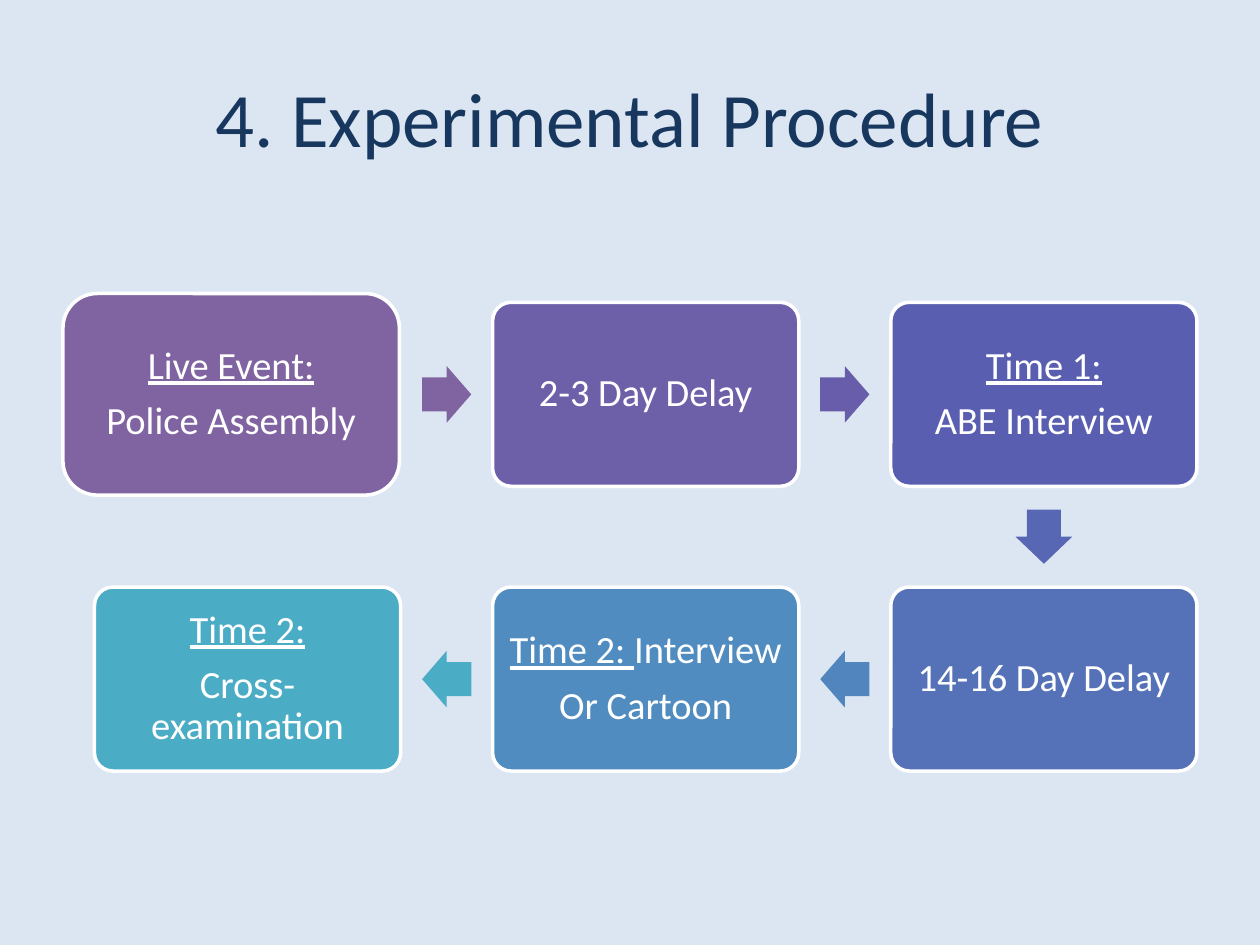
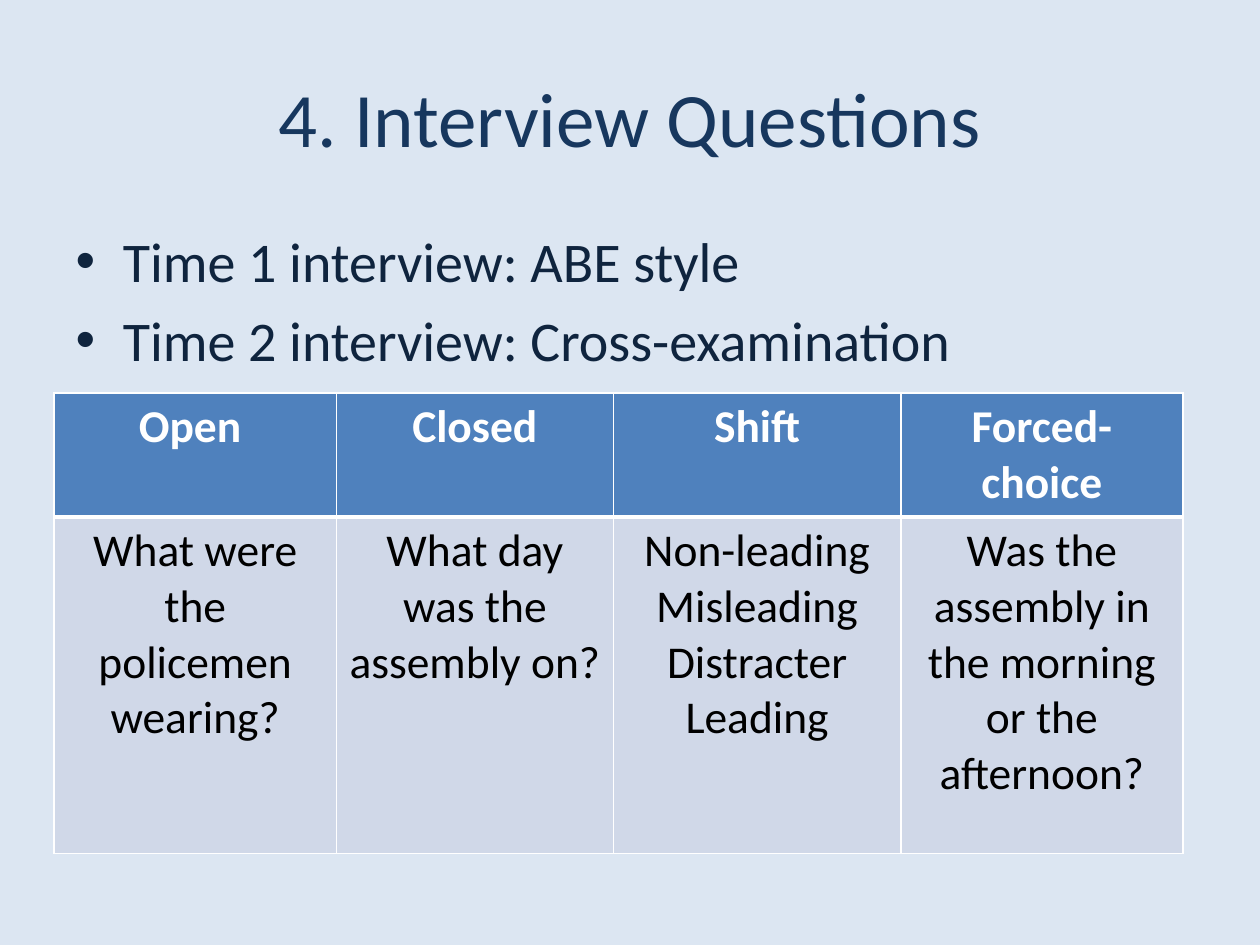
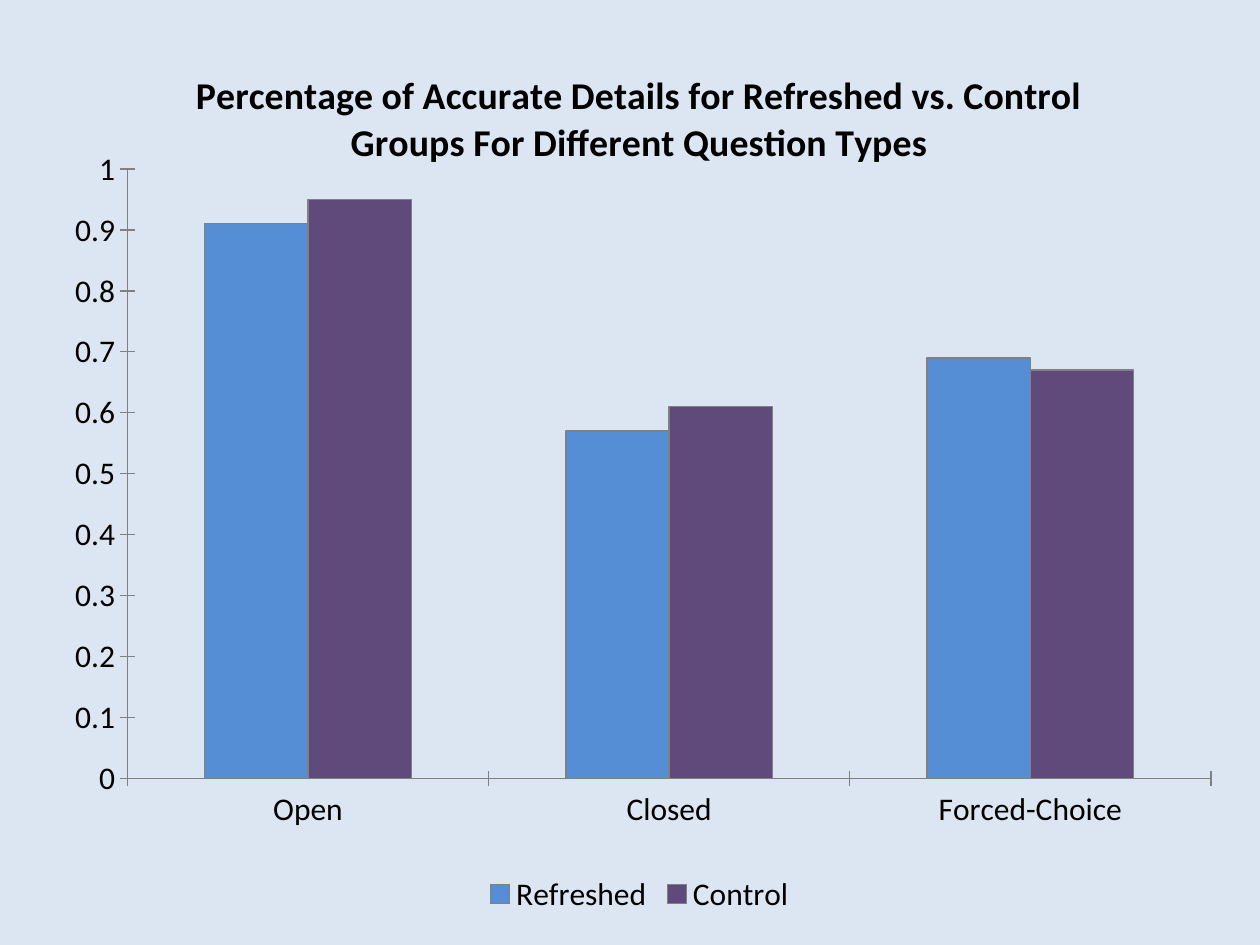
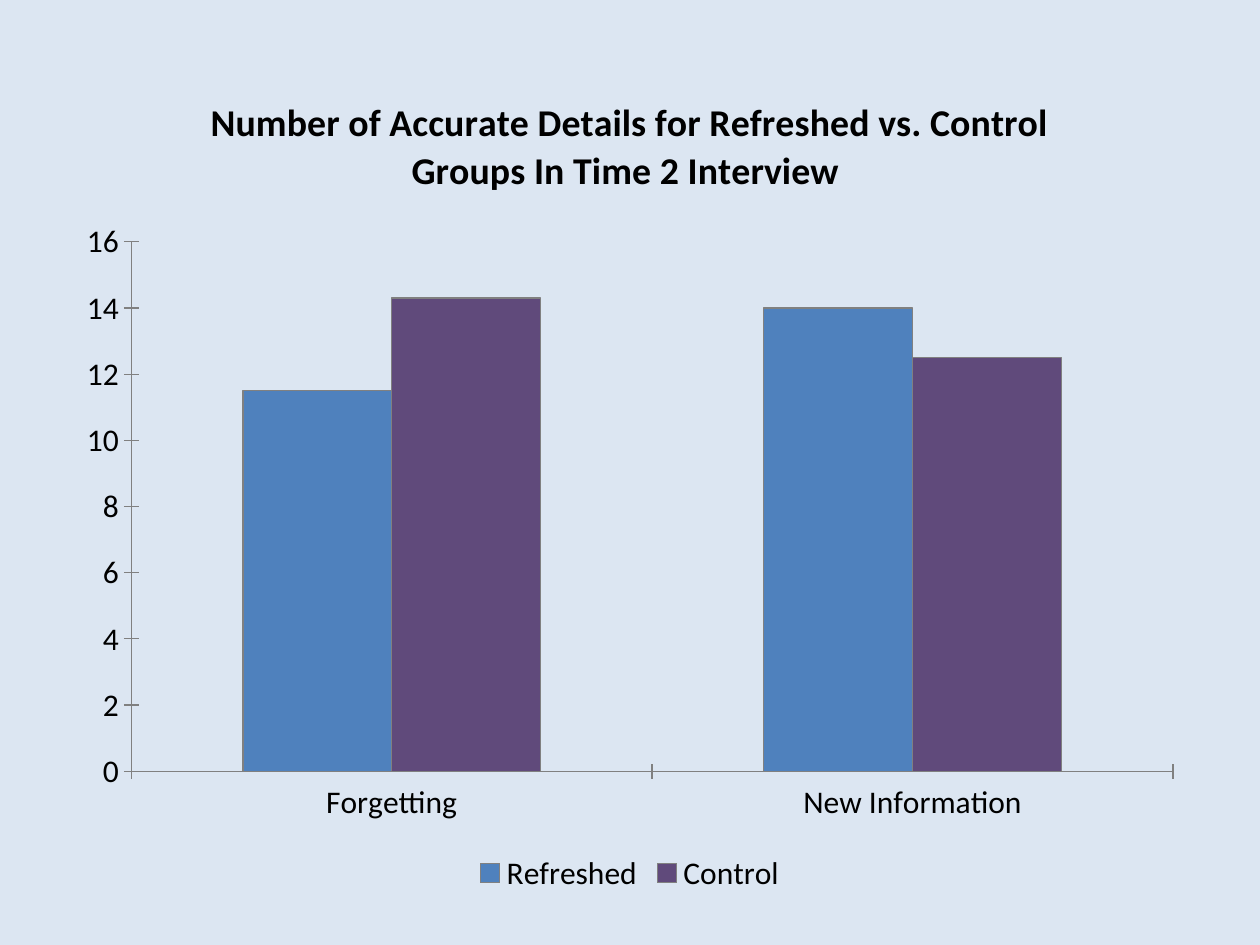
from pptx import Presentation
from pptx.chart.data import CategoryChartData
from pptx.dml.color import RGBColor
from pptx.enum.chart import XL_CHART_TYPE, XL_LEGEND_POSITION, XL_TICK_MARK
from pptx.enum.shapes import MSO_SHAPE
from pptx.enum.text import MSO_ANCHOR, PP_ALIGN
from pptx.oxml import parse_xml
from pptx.oxml.ns import nsdecls, qn
from pptx.util import Inches, Pt

CENTER = PP_ALIGN.CENTER
MIDDLE = MSO_ANCHOR.MIDDLE
ROUNDED = MSO_SHAPE.ROUNDED_RECTANGLE
ARROW = MSO_SHAPE.RIGHT_ARROW
COLUMNS = XL_CHART_TYPE.COLUMN_CLUSTERED
BOTTOM = XL_LEGEND_POSITION.BOTTOM
CROSS = XL_TICK_MARK.CROSS

TITLE_ONLY, TITLE_AND_BODY, BLANK = 5, 1, 6

FONT = "Calibri"
BACKGROUND = "DCE6F2"
NAVY = "17375E"
DARK_NAVY = "0F243E"
WHITE = "FFFFFF"
BLACK = "000000"
GREY = "808080"
BLUE = "4F81BD"
LIGHT_BLUE = "558ED5"
PURPLE = "604A7B"
PALE_BLUE = "D0D8E8"

# Flow diagram grid, in inches
FLOW_LEFT, FLOW_TOP = 0.75, 2.4
COLUMN_STEP, ROW_STEP = 3.16, 2.26
BOX_WIDTH, BOX_HEIGHT = 2.43, 1.46

# Column, row, box colour, colour of the arrow leading in, paragraphs.
# Each paragraph is an underlined part and a plain part.
STEPS = [
    (0, 0, "8064A2", None, [("Live Event:", ""), ("", "Police Assembly")]),
    (1, 0, "6E5FA9", "8064A2", [("", "2-3 Day Delay")]),
    (2, 0, "5A5EB1", "685DAB", [("Time 1:", ""), ("", "ABE Interview")]),
    (2, 1, "5572B8", "5767B4", [("", "14-16 Day Delay")]),
    (1, 1, "508CBF", "5185BD", [("Time 2: ", "Interview"), ("", "Or Cartoon")]),
    (0, 1, "4BACC6", "4BACC6", [("Time 2:", ""), ("", "Cross-examination")]),
]

QUESTIONS = [
    ["Open ", "Closed", "Shift", "Forced-choice"],
    ["What were the policemen wearing?",
     "What day was the assembly on?",
     "Non-leading\nMisleading\nDistracter\nLeading",
     "Was the assembly in the morning or the afternoon?"],
]


def rgb(color):
    return RGBColor.from_string(color)


def set_font(font, size, color, bold=None):
    font.name = FONT
    font.size = Pt(size)
    font.color.rgb = rgb(color)
    font.bold = bold


def set_fill(item, color):
    item.fill.solid()
    item.fill.fore_color.rgb = rgb(color)


def set_line(line, color, width):
    line.color.rgb = rgb(color)
    line.width = Pt(width)


def place(shape, left, top, width, height):
    shape.left, shape.top = Inches(left), Inches(top)
    shape.width, shape.height = Inches(width), Inches(height)


def add_page(deck, layout, title=None):
    page = deck.slides.add_slide(deck.slide_layouts[layout])
    if title:
        box = page.shapes.title
        place(box, 0.5, 0.3, 9, 1.25)
        box.text_frame.text = title
        box.text_frame.vertical_anchor = MIDDLE
        para = box.text_frame.paragraphs[0]
        para.alignment = CENTER
        set_font(para.font, 44, NAVY)
    return page


def add_list(page, items):
    box = page.placeholders[1]
    place(box, 0.5, 1.75, 9, 4.95)
    box.text_frame.text = "\n".join(items)
    for para in box.text_frame.paragraphs:
        set_font(para.font, 32, DARK_NAVY)


def add_block(page, kind, color, left, top, width, height):
    block = page.shapes.add_shape(kind, Inches(left), Inches(top),
                                  Inches(width), Inches(height))
    block.shadow.inherit = False
    set_fill(block, color)
    return block


# Flow diagram

def add_step(page, color, paragraphs, bounds, corner):
    box = add_block(page, ROUNDED, color, *bounds)
    box.adjustments[0] = corner
    set_line(box.line, WHITE, 2)
    frame = box.text_frame
    frame.word_wrap = True
    frame.vertical_anchor = MIDDLE
    frame.margin_left = frame.margin_right = Inches(0.05)
    frame.margin_top = frame.margin_bottom = Inches(0.09)
    for index, (underlined, plain) in enumerate(paragraphs):
        para = frame.add_paragraph() if index else frame.paragraphs[0]
        para.alignment = CENTER
        para.line_spacing = 0.9
        para.space_after = Pt(7.7)
        set_font(para.font, 22, WHITE)
        for text, underline in ((underlined, True), (plain, False)):
            if text:
                span = para.add_run()
                span.text = text
                span.font.underline = underline


def add_arrow(page, color, start, end):
    """Draw an arrow halfway between the boxes in two grid cells."""
    vertical = start[0] == end[0]
    length, thickness = (0.43 if vertical else 0.39), 0.45
    center_x = FLOW_LEFT + BOX_WIDTH / 2 + COLUMN_STEP * (start[0] + end[0]) / 2
    center_y = FLOW_TOP + BOX_HEIGHT / 2 + ROW_STEP * (start[1] + end[1]) / 2
    arrow = add_block(page, ARROW, color, center_x - length / 2,
                      center_y - thickness / 2, length, thickness)
    arrow.adjustments[0], arrow.adjustments[1] = 0.6, 0.5
    arrow.line.fill.background()
    if vertical:
        arrow.rotation = 90
    elif end[0] < start[0]:
        arrow.rotation = 180


def add_flow(page):
    previous = None
    for column, row, color, arrow_color, paragraphs in STEPS:
        if previous is None:
            # The opening event has a larger, rounder box
            bounds, corner = (0.5, 2.33, 2.67, 1.6), 0.17
        else:
            add_arrow(page, arrow_color, previous, (column, row))
            bounds = (FLOW_LEFT + column * COLUMN_STEP,
                      FLOW_TOP + row * ROW_STEP, BOX_WIDTH, BOX_HEIGHT)
            corner = 0.1
        add_step(page, color, paragraphs, bounds, corner)
        previous = (column, row)


# Table

def set_borders(cell, bottom, top):
    properties = cell._tc.get_or_add_tcPr()
    widths = {"lnL": 1, "lnR": 1, "lnT": top, "lnB": bottom}
    for index, (side, width) in enumerate(widths.items()):
        properties.insert(index, parse_xml(
            f'<a:{side} {nsdecls("a")} w="{Pt(width)}"><a:solidFill>'
            f'<a:srgbClr val="{WHITE}"/></a:solidFill></a:{side}>'))


def add_question_table(page):
    widths, heights = [2.24, 2.2, 2.28, 2.24], [0.98, 2.67]
    table = page.shapes.add_table(
        len(heights), len(widths), Inches(0.43), Inches(3.12),
        Inches(sum(widths)), Inches(sum(heights))).table
    for column, width in zip(table.columns, widths):
        column.width = Inches(width)
    for row, height in zip(table.rows, heights):
        row.height = Inches(height)
    for row, texts in enumerate(QUESTIONS):
        header = row == 0
        for column, text in enumerate(texts):
            cell = table.cell(row, column)
            cell.text = text
            set_fill(cell, BLUE if header else PALE_BLUE)
            set_borders(cell, bottom=3 if header else 1, top=1 if header else 3)
            for para in cell.text_frame.paragraphs:
                para.alignment = CENTER
                set_font(para.font, 26, WHITE if header else BLACK, header)


# Charts

def set_plot_area(chart, x, y, width, height):
    """Fix the inner plot area, in fractions of the chart."""
    area = chart.plots[0]._element.getparent()
    for layout in area.findall(qn("c:layout")):
        area.remove(layout)
    sizes = "".join(f'<c:{name} val="{value}"/>' for name, value in
                    zip("xywh", (x, y, width, height)))
    area.insert(0, parse_xml(
        f'<c:layout {nsdecls("c")}><c:manualLayout>'
        '<c:layoutTarget val="inner"/><c:xMode val="edge"/><c:yMode val="edge"/>'
        f'{sizes}</c:manualLayout></c:layout>'))


def add_column_chart(page, bounds, title, categories, series, top, step):
    data = CategoryChartData()
    data.categories = categories
    for name, values, _ in series:
        data.add_series(name, values)
    chart = page.shapes.add_chart(
        COLUMNS, *[Inches(length) for length in bounds], data).chart
    set_font(chart.font, 18, BLACK)

    chart.has_title = True
    chart.chart_title.include_in_layout = False
    frame = chart.chart_title.text_frame
    frame.text = title
    set_font(frame.paragraphs[0].font, 21.6, BLACK, True)

    chart.has_legend = True
    chart.legend.position = BOTTOM
    chart.legend.include_in_layout = False

    plot = chart.plots[0]
    plot.vary_by_categories = False
    plot.gap_width = 150
    plot.overlap = 0
    for bars, (_, _, color) in zip(plot.series, series):
        set_fill(bars.format, color)
        set_line(bars.format.line, GREY, 0.75)

    for axis in (chart.category_axis, chart.value_axis):
        axis.has_major_gridlines = False
        axis.major_tick_mark = CROSS
        set_line(axis.format.line, GREY, 0.75)
    chart.value_axis.minimum_scale = 0
    chart.value_axis.maximum_scale = top
    chart.value_axis.major_unit = step
    return chart


def main():
    deck = Presentation()
    deck.slide_width, deck.slide_height = Inches(10), Inches(7.5)
    set_fill(deck.slide_master.background, BACKGROUND)

    # Procedure
    page = add_page(deck, TITLE_ONLY, "4. Experimental Procedure")
    add_flow(page)

    # Questions
    page = add_page(deck, TITLE_AND_BODY, "4. Interview Questions")
    add_list(page, ["Time 1 interview: ABE style",
                    "Time 2 interview: Cross-examination"])
    add_question_table(page)

    # Accuracy by question type
    chart = add_column_chart(
        add_page(deck, BLANK), (0.35, 0.29, 9.45, 7.01),
        "Percentage of Accurate Details for Refreshed vs. Control "
        "Groups For Different Question Types",
        ["Open", "Closed", "Forced-Choice"],
        [("Refreshed", (0.91, 0.57, 0.69), LIGHT_BLUE),
         ("Control", (0.95, 0.61, 0.67), PURPLE)], top=1, step=0.1)
    set_plot_area(chart, 0.07, 0.15, 0.91, 0.69)

    # Accuracy in the second interview
    add_column_chart(
        add_page(deck, BLANK), (0.51, 0.52, 8.98, 6.61),
        "Number of Accurate Details for Refreshed vs. Control "
        "Groups In Time 2 Interview ",
        ["Forgetting", "New Information"],
        [("Refreshed", (11.5, 14), BLUE),
         ("Control", (14.3, 12.5), PURPLE)], top=16, step=2)

    deck.save("out.pptx")


if __name__ == "__main__":
    main()
